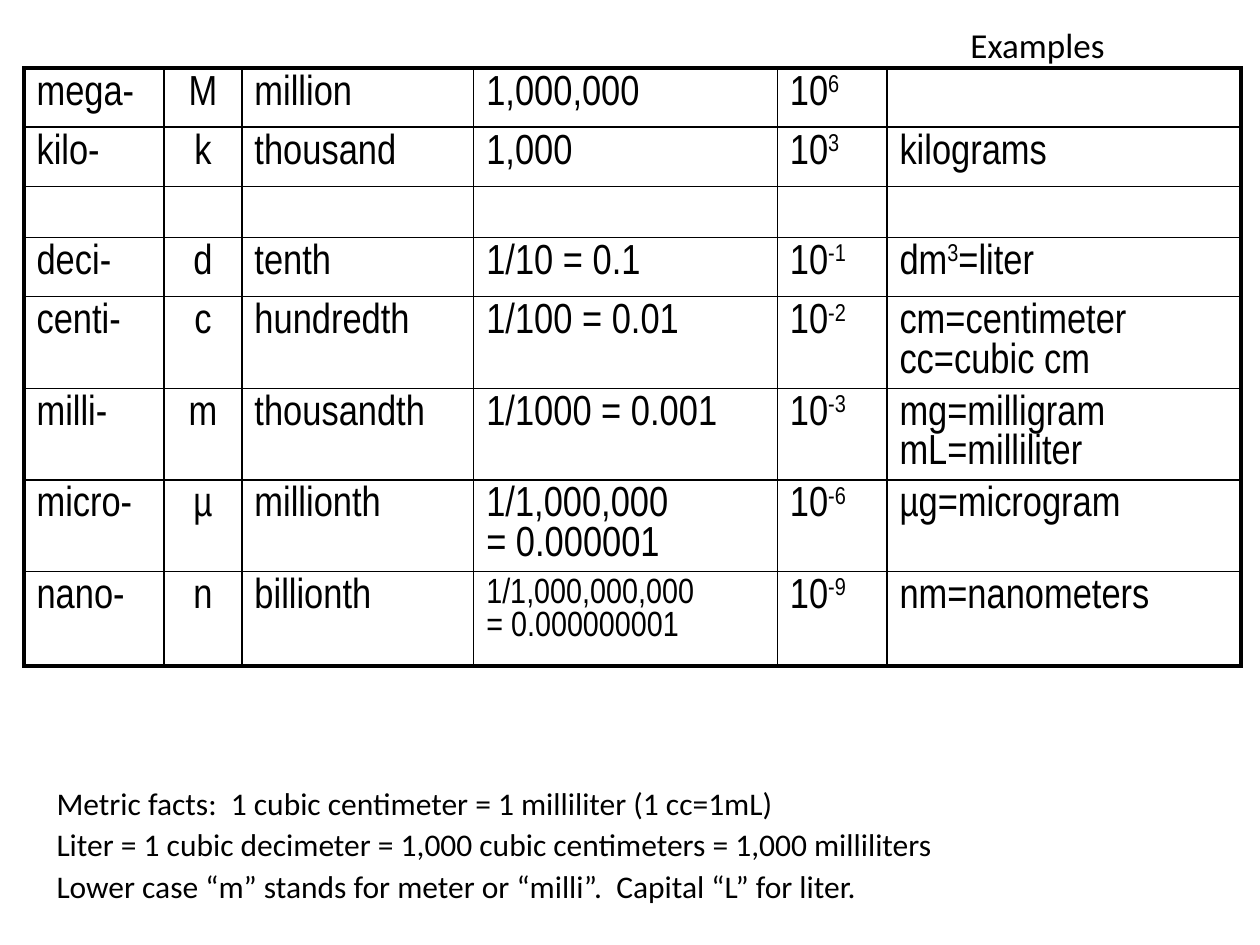
from copy import deepcopy
from dataclasses import dataclass

from lxml import etree
from pptx import Presentation
from pptx.dml.color import RGBColor
from pptx.enum import text
from pptx.oxml import ns
from pptx.util import Inches, Pt

COLORS = {"ink": "000000"}
COLUMN_WIDTHS = (1.11, 0.62, 1.84, 2.41, 0.87, 2.81)
THIN, THICK = 1, 2.25
SYMBOL_COLUMN = 1


@dataclass
class PrefixRow:
    height: float
    cells: tuple = ("",) * 6
    number_size: int = 24


@dataclass
class Label:
    left: float
    top: float
    width: float
    height: float
    content: str
    size: int
    align: text.PP_ALIGN = text.PP_ALIGN.LEFT
    spacing: float = 1.0


ROWS = (
    PrefixRow(0.47, ("mega-", "M", "million", "1,000,000", "10^6", "")),
    PrefixRow(0.47, ("kilo-", "k", "thousand", "1,000", "10^3", "kilograms")),
    PrefixRow(0.2),
    PrefixRow(0.47, ("deci-", "d", "tenth", "1/10 = 0.1", "10^-1", "dm^3^=liter")),
    PrefixRow(0.64, ("centi-", "c", "hundredth", "1/100 = 0.01", "10^-2",
                     "cm=centimeter\vcc=cubic cm")),
    PrefixRow(0.57, ("milli-", "m", "thousandth", "1/1000 = 0.001", "10^-3",
                     "mg=milligram\vmL=milliliter")),
    PrefixRow(0.57, ("micro-", "µ", "millionth", "1/1,000,000\v= 0.000001", "10^-6",
                     "µg=microgram")),
    PrefixRow(0.75, ("nano-", "n", "billionth", "1/1,000,000,000\v= 0.000000001", "10^-9",
                     "nm=nanometers"), 20),
)

LABELS = (
    Label(6.7, 0.14, 3.07, 0.43, "Examples", 20, text.PP_ALIGN.CENTER),
    Label(0.35, 6.14, 9.65, 1.09,
          "Metric facts:  1 cubic centimeter = 1 milliliter (1 cc=1mL)\v"
          "Liter = 1 cubic decimeter = 1,000 cubic centimeters = 1,000 milliliters\v"
          "Lower case “m” stands for meter or “milli”.  Capital “L” for liter.",
          18, spacing=1.1),
)


def write(p, content: str, font: str, size: int) -> None:
    first, *rest = content.split("^")
    p.text = first
    for i, piece in enumerate(rest):
        r = p.add_run()
        r.text = piece
        if i % 2 == 0:
            r._r.get_or_add_rPr().set("baseline", "30000")
    for r in p.runs:
        r.font.name = font
        r.font.size = Pt(size)
        r.font.color.rgb = RGBColor.from_string(COLORS["ink"])
    for br in p._p.findall(ns.qn("a:br")):
        br.append(deepcopy(p.runs[0]._r.rPr))


def add_borders(cell, weights: dict) -> None:
    tc_pr = cell._tc.get_or_add_tcPr()
    for side, weight in weights.items():
        ln = etree.SubElement(tc_pr, ns.qn(f"a:ln{side}"), w=str(Pt(weight)))
        fill = etree.SubElement(ln, ns.qn("a:solidFill"))
        etree.SubElement(fill, ns.qn("a:srgbClr"), val=COLORS["ink"])


def add_prefix_table(s) -> None:
    last_row, last_col = len(ROWS) - 1, len(COLUMN_WIDTHS) - 1
    table = s.shapes.add_table(len(ROWS), len(COLUMN_WIDTHS), Inches(0.19), Inches(0.54),
                               Inches(9.66), Inches(5.47)).table
    table.first_row = table.horz_banding = False
    for column, width in zip(table.columns, COLUMN_WIDTHS):
        column.width = Inches(width)
    for i, row in enumerate(ROWS):
        table.rows[i].height = Inches(row.height)
        for j, content in enumerate(row.cells):
            cell = table.cell(i, j)
            add_borders(cell, {
                "L": THICK if j == 0 else THIN,
                "R": THICK if j == last_col else THIN,
                "T": THICK if i == 0 else THIN,
                "B": THICK if i == last_row else THIN,
            })
            cell.fill.background()
            if content:
                p = cell.text_frame.paragraphs[0]
                write(p, content, "Arial Narrow", row.number_size if j == 3 else 24)
                if j == SYMBOL_COLUMN:
                    p.alignment = text.PP_ALIGN.CENTER


def add_label(s, label: Label) -> None:
    sp = s.shapes.add_textbox(Inches(label.left), Inches(label.top),
                              Inches(label.width), Inches(label.height))
    tf = sp.text_frame
    tf.word_wrap = True
    tf.auto_size = text.MSO_AUTO_SIZE.SHAPE_TO_FIT_TEXT
    p = tf.paragraphs[0]
    write(p, label.content, "Calibri", label.size)
    p.alignment = label.align
    p.line_spacing = label.spacing


def main() -> None:
    prs = Presentation()
    prs.slide_width, prs.slide_height = Inches(10), Inches(7.5)
    s = prs.slides.add_slide(prs.slide_layouts[6])
    add_prefix_table(s)
    for label in LABELS:
        add_label(s, label)
    prs.save("out.pptx")


if __name__ == "__main__":
    main()
